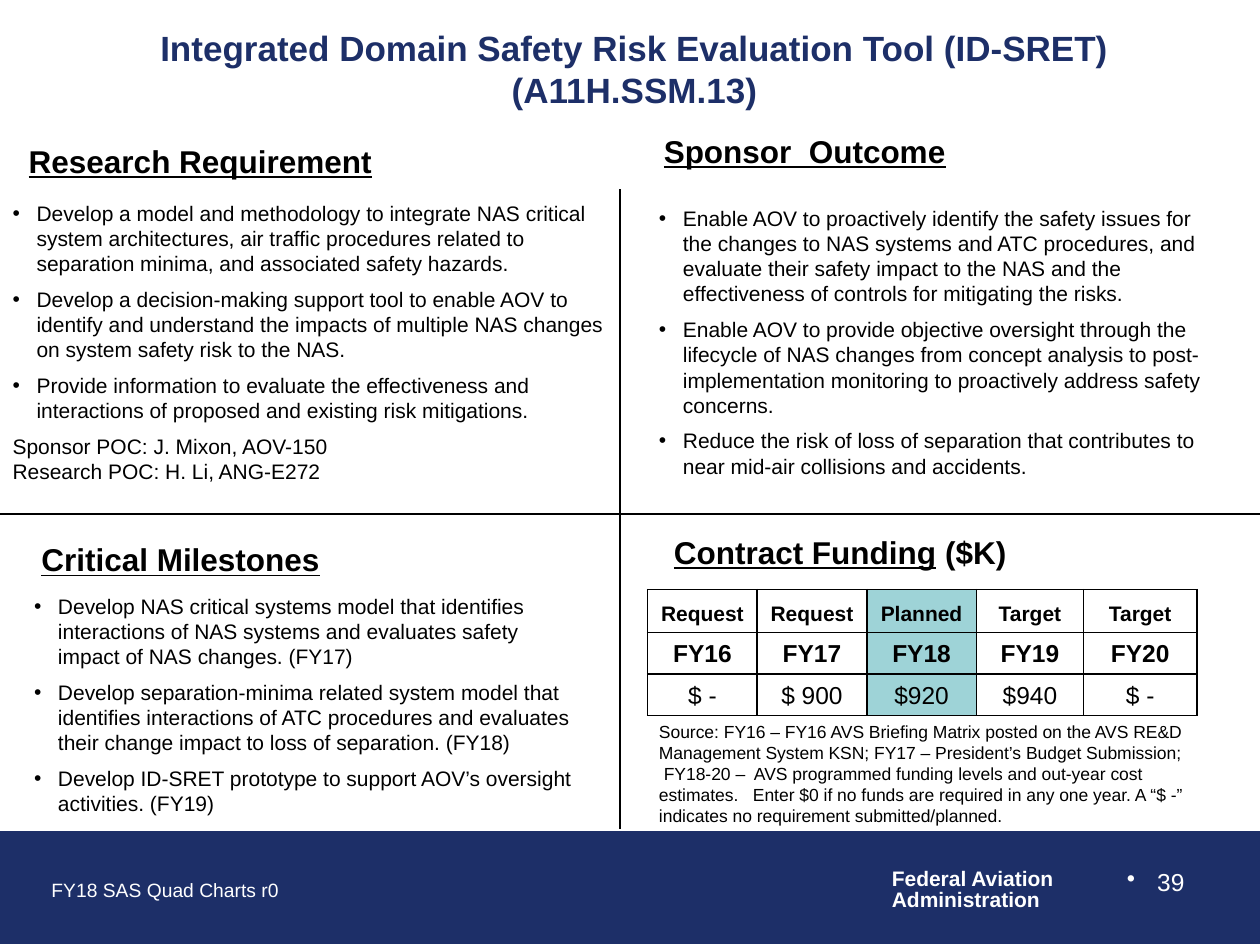
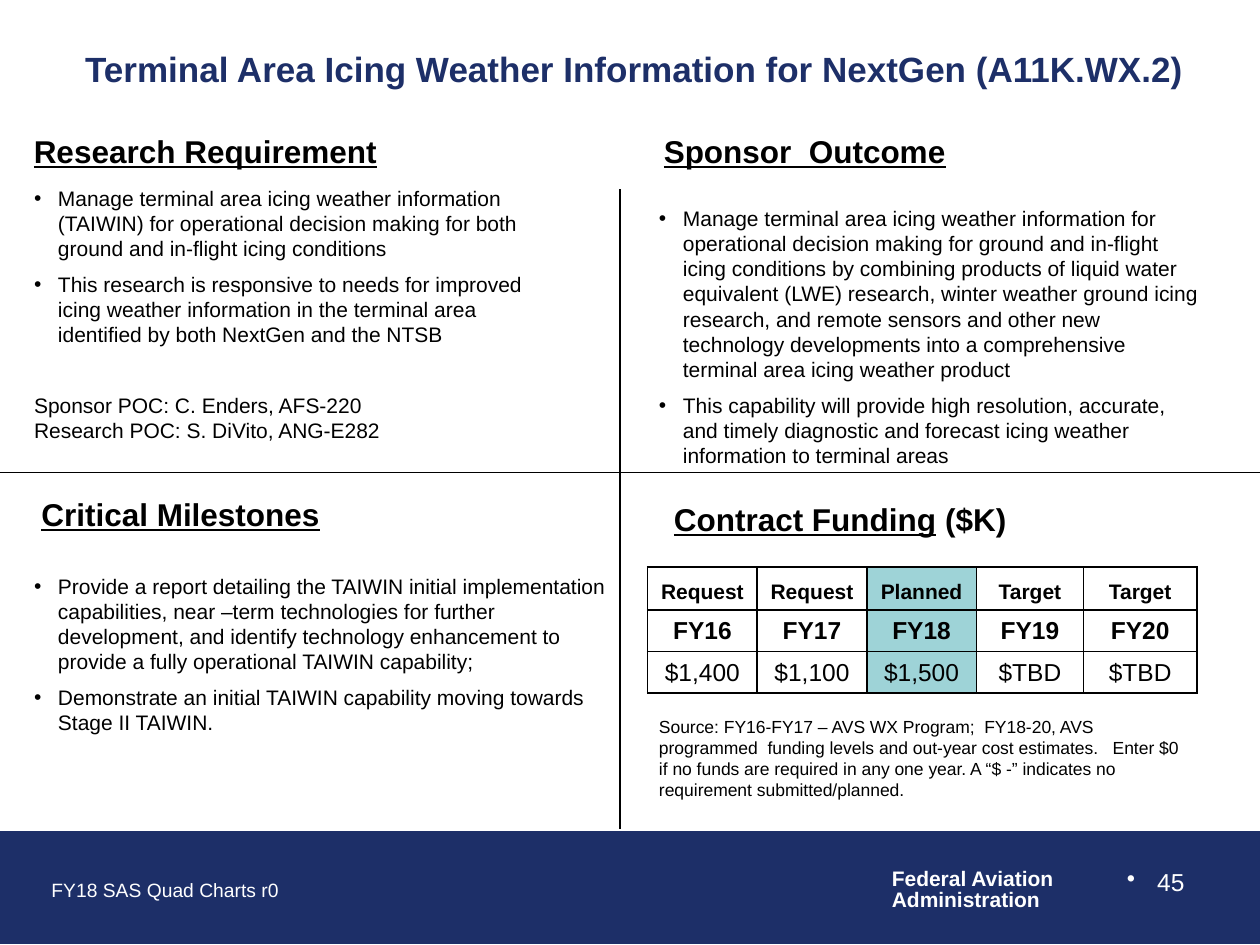
import pptx
import pptx.util
import pptx.dml.color
import pptx.enum.shapes
import pptx.enum.text
import pptx.oxml.ns
import lxml.etree

Inches = pptx.util.Inches
Pt = pptx.util.Pt
RGBColor = pptx.dml.color.RGBColor
ALIGN = pptx.enum.text.PP_ALIGN
ANCHOR = pptx.enum.text.MSO_ANCHOR
qn = pptx.oxml.ns.qn

NAVY = RGBColor(0x1D, 0x2F, 0x68)
TEAL = RGBColor(0x9E, 0xD3, 0xD7)
BLACK = RGBColor(0, 0, 0)
WHITE = RGBColor(255, 255, 255)
FONT = "Arial"
PLANNED_COLUMN = 2
COLUMN_WIDTHS = [0.87, 0.87, 0.87, 0.85, 0.9]
ROW_HEIGHTS = [0.34, 0.33, 0.33]
FUNDING_STAGES = ["Request", "Request", "Planned", "Target", "Target"]
FISCAL_YEARS = ["FY16", "FY17", "FY18", "FY19", "FY20"]

# Content of each quad chart; positions are left, top, width, height in inches
quad_charts = [
    {
        "title": "Integrated Domain Safety Risk Evaluation Tool (ID-SRET) (A11H.SSM.13)",
        "page": "39",
        "divider_top": 4.08,
        "headings": {
            "Research Requirement": (0.13, 1.08, 5, 0.33),
            "Sponsor  Outcome": (5.17, 1, 4.67, 0.33),
            "Critical Milestones": (0.23, 4.24, 4.5, 0.38),
            "Contract Funding": (5.25, 4.18, 4.42, 0.54),
        },
        "requirement_at": (0, 1.54, 5, 2.71),
        "requirement": [
            "Develop a model and methodology to integrate NAS critical system architectures, "
            "air traffic procedures related to separation minima, and associated safety hazards.",
            "Develop a decision-making support tool to enable AOV to identify and understand "
            "the impacts of multiple NAS changes on system safety risk to the NAS.",
            "Provide information to evaluate the effectiveness and interactions of proposed "
            "and existing risk mitigations.",
        ],
        "contacts": ["Sponsor POC: J. Mixon, AOV-150", "Research POC: H. Li, ANG-E272"],
        "contacts_gap": 6,
        "outcome_at": (5.13, 1.58, 4.53, 2.32),
        "outcome": [
            "Enable AOV to proactively identify the safety issues for the changes to NAS systems "
            "and ATC procedures, and evaluate their safety impact to the NAS and the "
            "effectiveness of controls for mitigating the risks.",
            "Enable AOV to provide objective oversight through the lifecycle of NAS changes from "
            "concept analysis to post-implementation monitoring to proactively address safety "
            "concerns.",
            "Reduce the risk of loss of separation that contributes to near mid-air collisions "
            "and accidents.",
        ],
        "milestones_at": (0.17, 4.66, 4.55, 1.92),
        "milestones": [
            "Develop NAS critical systems model that identifies interactions of NAS systems and "
            "evaluates safety impact of NAS changes. (FY17)",
            "Develop separation-minima related system model that identifies interactions of ATC "
            "procedures and evaluates their change impact to loss of separation. (FY18)",
            "Develop ID-SRET prototype to support AOV’s oversight activities. (FY19)",
        ],
        "funding_top": 4.68,
        "funding": ["$ -", "$ 900", "$920", "$940", "$ -"],
        "source_at": (5.13, 5.67, 4.37, 1.19),
        "source": "Source: FY16 – FY16 AVS Briefing Matrix posted on the AVS RE&D Management System "
                  "KSN; FY17 – President’s Budget Submission;  FY18-20 –  AVS programmed funding "
                  "levels and out-year cost estimates.   Enter $0 if no funds are required in any "
                  "one year. A “$ -” indicates no requirement submitted/planned.",
    },
    {
        "title": "Terminal Area Icing Weather Information for NextGen (A11K.WX.2)",
        "page": "45",
        "divider_top": 3.75,
        "headings": {
            "Research Requirement": (0.17, 1, 5, 0.33),
            "Sponsor  Outcome": (5.17, 1, 4.67, 0.33),
            "Critical Milestones": (0.23, 3.88, 4.5, 0.38),
            "Contract Funding": (5.25, 3.92, 4.42, 0.54),
        },
        "requirement_at": (0.17, 1.42, 4.42, 2.51),
        "requirement": [
            "Manage terminal area icing weather information (TAIWIN) for operational decision "
            "making for both ground and in-flight icing conditions",
            "This research is responsive to needs for improved icing weather information in the "
            "terminal area identified by both NextGen and the NTSB",
        ],
        "contacts": ["Sponsor POC: C. Enders, AFS-220", "Research POC: S. DiVito, ANG-E282"],
        "contacts_gap": 26,
        "outcome_at": (5.13, 1.58, 4.53, 2.22),
        "outcome": [
            "Manage terminal area icing weather information for operational decision making for "
            "ground and in-flight icing conditions by combining products of liquid water "
            "equivalent (LWE) research, winter weather ground icing research, and remote sensors "
            "and other new technology developments into a comprehensive terminal area icing "
            "weather product",
            "This capability will provide high resolution, accurate, and timely diagnostic and "
            "forecast icing weather information to terminal areas",
        ],
        "milestones_at": (0.17, 4.5, 4.75, 1.41),
        "milestones": [
            "Provide a report detailing the TAIWIN initial implementation capabilities, near "
            "–term technologies for further development, and identify technology enhancement to "
            "provide a fully operational TAIWIN capability;",
            "Demonstrate an initial TAIWIN capability moving towards Stage II TAIWIN.",
        ],
        "funding_top": 4.5,
        "funding": ["$1,400", "$1,100", "$1,500", "$TBD", "$TBD"],
        "source_at": (5.13, 5.63, 4.37, 1.03),
        "source": "Source: FY16-FY17 – AVS WX Program;  FY18-20, AVS programmed  funding levels and "
                  "out-year cost estimates.   Enter $0 if no funds are required in any one year. "
                  "A “$ -” indicates no requirement submitted/planned.",
    },
]


def place(shape, position, anchor=ANCHOR.TOP, wrap=True):
    """Move a text shape and return its text frame."""
    shape.left, shape.top, shape.width, shape.height = map(Inches, position)
    frame = shape.text_frame
    frame.auto_size = pptx.enum.text.MSO_AUTO_SIZE.NONE
    frame.word_wrap = wrap
    frame.vertical_anchor = anchor
    return frame


def write(frame, text, size, color=BLACK, bold=False, underline=False,
          align=ALIGN.LEFT, before=0, hang=0):
    """Add one paragraph; a hang in inches gives it a bullet."""
    paragraph = frame.paragraphs[0]
    if paragraph.runs:
        paragraph = frame.add_paragraph()
    else:
        before = 0
    properties = paragraph._p.get_or_add_pPr()
    properties.set("marL", str(Inches(hang)))
    properties.set("indent", str(-Inches(hang)))
    if hang:
        lxml.etree.SubElement(properties, qn("a:buChar")).set("char", "•")
    else:
        lxml.etree.SubElement(properties, qn("a:buNone"))
    paragraph.alignment = align
    paragraph.space_before = Pt(before)
    run = paragraph.add_run()
    run.text = text
    run.font.name, run.font.size = FONT, Pt(size)
    run.font.bold, run.font.underline = bold, underline
    run.font.color.rgb = color
    return paragraph


presentation = pptx.Presentation()
presentation.slide_width = Inches(10)
presentation.slide_height = Inches(7.5)
comparison_layout = presentation.slide_layouts[4]

for chart in quad_charts:
    slide = presentation.slides.add_slide(comparison_layout)
    shapes = slide.shapes

    # Footer band
    band = shapes.add_shape(pptx.enum.shapes.MSO_SHAPE.RECTANGLE,
                            Inches(0), Inches(6.6), Inches(10), Inches(0.89))
    band.shadow.inherit = False
    band.fill.solid()
    band.fill.fore_color.rgb = NAVY
    band.line.color.rgb = NAVY
    band.line.width = Pt(0.75)

    agency = place(shapes.add_textbox(0, 0, 0, 0), (6.98, 6.85, 1.5, 0.44), wrap=False)
    for agency_line in ("Federal Aviation", "Administration"):
        write(agency, agency_line, 12, WHITE, bold=True).line_spacing = 0.85
    page_number = place(shapes.add_textbox(0, 0, 0, 0), (7.17, 6.83, 2.33, 0.52))
    write(page_number, chart["page"], 14, WHITE, align=ALIGN.RIGHT, hang=0.24)
    revision = place(shapes.add_textbox(0, 0, 0, 0), (0.31, 6.92, 2.02, 0.29), wrap=False)
    write(revision, "FY18 SAS Quad Charts r0", 11, WHITE)

    # Title
    title = place(shapes.title, (0.4, 0.13, 9.27, 0.83), ANCHOR.MIDDLE)
    write(title, chart["title"], 20, NAVY, bold=True, align=ALIGN.CENTER)

    # Quadrant dividers
    divider_top = chart["divider_top"]
    for x1, y1, x2, y2 in ((4.92, 1.5, 4.92, 6.58), (0, divider_top, 10, divider_top)):
        divider = shapes.add_connector(pptx.enum.shapes.MSO_CONNECTOR.STRAIGHT,
                                       Inches(x1), Inches(y1), Inches(x2), Inches(y2))
        divider.line.color.rgb = BLACK
        divider.line.width = Pt(0.75)
        lxml.etree.SubElement(divider._element.spPr, qn("a:effectLst"))

    # Quadrant headings
    for heading, position in chart["headings"].items():
        heading_frame = place(shapes.add_textbox(0, 0, 0, 0), position)
        heading_line = write(heading_frame, heading, 18, bold=True, underline=True)
        if heading == "Contract Funding":
            unit = heading_line.add_run()
            unit.text = " ($K)"
            unit.font.name, unit.font.size, unit.font.bold = FONT, Pt(18), True
            unit.font.color.rgb = BLACK

    # Bulleted lists
    for index, section in ((2, "requirement"), (4, "outcome"), (3, "milestones")):
        section_frame = place(slide.placeholders[index], chart[section + "_at"])
        for point in chart[section]:
            write(section_frame, point, 12, before=6, hang=0.19)
        if section == "requirement":
            for contact, gap in zip(chart["contacts"], (chart["contacts_gap"], 0)):
                write(section_frame, contact, 12, before=gap)

    # Funding table
    funding = shapes.add_table(3, 5, Inches(5.14), Inches(chart["funding_top"]),
                               Inches(sum(COLUMN_WIDTHS)), Inches(sum(ROW_HEIGHTS))).table
    for column, width in zip(funding.columns, COLUMN_WIDTHS):
        column.width = Inches(width)
    for row, height in zip(funding.rows, ROW_HEIGHTS):
        row.height = Inches(height)
    funding_rows = ((FUNDING_STAGES, 12, True), (FISCAL_YEARS, 14, True),
                    (chart["funding"], 14, False))
    for row_index, (values, size, bold) in enumerate(funding_rows):
        for column_index, value in enumerate(values):
            cell = funding.cell(row_index, column_index)
            cell.vertical_anchor = ANCHOR.BOTTOM
            write(cell.text_frame, value, size, bold=bold, align=ALIGN.CENTER)
            cell_properties = cell._tc.get_or_add_tcPr()
            for side in ("a:lnL", "a:lnR", "a:lnT", "a:lnB"):
                border = lxml.etree.SubElement(cell_properties, qn(side), w=str(Pt(1)))
                border_fill = lxml.etree.SubElement(border, qn("a:solidFill"))
                lxml.etree.SubElement(border_fill, qn("a:srgbClr"), val=str(BLACK))
            cell.fill.solid()
            cell.fill.fore_color.rgb = TEAL if column_index == PLANNED_COLUMN else WHITE

    # Funding source note
    source = place(slide.placeholders[1], chart["source_at"])
    write(source, chart["source"], 10)

presentation.save("out.pptx")
